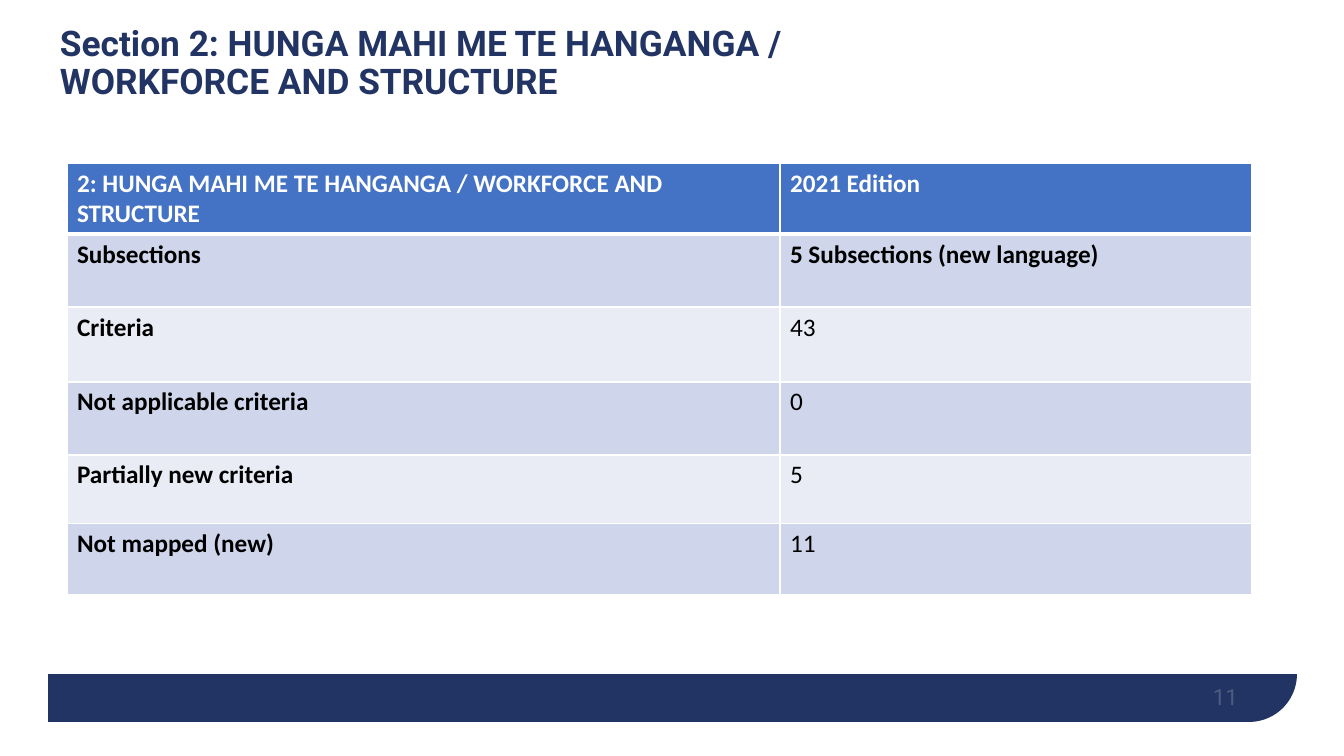
"""Build the workforce and structure section slide with its criteria table."""
import dataclasses

import lxml.etree
import pptx
import pptx.dml.color
import pptx.enum.shapes
import pptx.enum.text
import pptx.oxml.ns
import pptx.util

EMU_PER_PX = 914400 / 100.8
COLORS = {
    "navy": "213463",
    "white": "FFFFFF",
    "black": "000000",
    "header": "4472C4",
    "band_dark": "CFD5EA",
    "band_light": "E9EBF5",
}
ANCHOR = pptx.enum.text.MSO_ANCHOR
ALIGN = pptx.enum.text.PP_ALIGN
PRESET = pptx.enum.shapes.MSO_SHAPE


@dataclasses.dataclass(frozen=True)
class Box:
    left: int
    top: int
    width: int
    height: int

    def emu(self) -> tuple:
        return tuple(px(side) for side in dataclasses.astuple(self))


@dataclasses.dataclass(frozen=True)
class TextStyle:
    font: str
    size: float
    color: str
    bold: bool = False


@dataclasses.dataclass(frozen=True)
class Row:
    label: str
    value: str
    height: int
    value_bold: bool = False


ROWS = [
    Row("2: HUNGA MAHI ME TE HANGANGA / WORKFORCE AND STRUCTURE", "2021 Edition", 71, True),
    Row("Subsections", "5 Subsections (new language)", 73, True),
    Row("Criteria", "43", 75),
    Row("Not applicable criteria", "0", 73),
    Row("Partially new criteria", "5", 69),
    Row("Not mapped (new)", "11", 71),
]
COLUMN_WIDTHS = [713, 472]


def px(length: int) -> pptx.util.Emu:
    return pptx.util.Emu(round(length * EMU_PER_PX))


def rgb(name: str) -> pptx.dml.color.RGBColor:
    return pptx.dml.color.RGBColor.from_string(COLORS[name])


def add_run(paragraph, text: str, style: TextStyle):
    run = paragraph.add_run()
    run.text = text
    run.font.name = style.font
    run.font.size = pptx.util.Pt(style.size)
    run.font.bold = style.bold
    run.font.color.rgb = rgb(style.color)
    return run


def add_panel(slide, preset, box: Box, color: str):
    panel = slide.shapes.add_shape(preset, *box.emu())
    panel.shadow.inherit = False
    panel.fill.solid()
    panel.fill.fore_color.rgb = rgb(color)
    panel.line.fill.background()
    return panel


def add_text(slide, box: Box, text: str, style: TextStyle, anchor, align, side_inset: int = 0):
    frame = slide.shapes.add_textbox(*box.emu()).text_frame
    frame.word_wrap = True
    frame.vertical_anchor = anchor
    frame.margin_left = frame.margin_right = px(side_inset)
    frame.margin_top = frame.margin_bottom = 0
    paragraph = frame.paragraphs[0]
    paragraph.alignment = align
    return paragraph, add_run(paragraph, text, style)


def set_borders(cell, widths: dict) -> None:
    properties = cell._tc.get_or_add_tcPr()
    qn = pptx.oxml.ns.qn
    for position, (side, points) in enumerate(widths.items()):
        border = lxml.etree.Element(qn(f"a:{side}"), w=str(pptx.util.Pt(points)))
        fill = lxml.etree.SubElement(border, qn("a:solidFill"))
        lxml.etree.SubElement(fill, qn("a:srgbClr"), val=COLORS["white"])
        properties.insert(position, border)


def add_criteria_table(slide, left: int, top: int) -> None:
    box = Box(left, top, sum(COLUMN_WIDTHS), sum(row.height for row in ROWS))
    table = slide.shapes.add_table(len(ROWS), len(COLUMN_WIDTHS), *box.emu()).table
    for column, width in zip(table.columns, COLUMN_WIDTHS):
        column.width = px(width)
    for index, row in enumerate(ROWS):
        table.rows[index].height = px(row.height)
        band = "header" if index == 0 else ("band_dark" if index % 2 else "band_light")
        ink = "white" if index == 0 else "black"
        widths = {"lnL": 1, "lnR": 1, "lnT": 3 if index == 1 else 1, "lnB": 3 if index == 0 else 1}
        for column, (text, bold) in enumerate([(row.label, True), (row.value, row.value_bold)]):
            cell = table.cell(index, column)
            cell.fill.solid()
            cell.fill.fore_color.rgb = rgb(band)
            set_borders(cell, widths)
            add_run(cell.text_frame.paragraphs[0], text, TextStyle("Calibri", 18, ink, bold))


def main() -> None:
    deck = pptx.Presentation()
    deck.slide_width, deck.slide_height = px(1344), px(756)
    slide = deck.slides.add_slide(deck.slide_layouts[6])

    footer = add_panel(slide, PRESET.ROUND_1_RECTANGLE, Box(48, 37, 1249, 685), "navy")
    footer.adjustments[0] = 0.07
    footer._element.spPr.xfrm.set("flipV", "1")
    add_panel(slide, PRESET.RECTANGLE, Box(0, 0, 1344, 674), "white")

    _, page_number = add_text(slide, Box(936, 670, 302, 40), "11",
                              TextStyle("Roboto", 16, "white"), ANCHOR.BOTTOM, ALIGN.RIGHT)
    number_color = page_number._r.rPr.find(".//" + pptx.oxml.ns.qn("a:srgbClr"))
    lxml.etree.SubElement(number_color, pptx.oxml.ns.qn("a:alpha"), val="20000")

    heading, _ = add_text(slide, Box(50, 26, 796, 76),
                          "Section 2: HUNGA MAHI ME TE HANGANGA / WORKFORCE AND STRUCTURE",
                          TextStyle("Roboto", 25.2, "navy", True), ANCHOR.TOP, ALIGN.LEFT, 10)
    heading.line_spacing = 0.9

    add_criteria_table(slide, 67, 163)
    deck.save("out.pptx")


if __name__ == "__main__":
    main()
